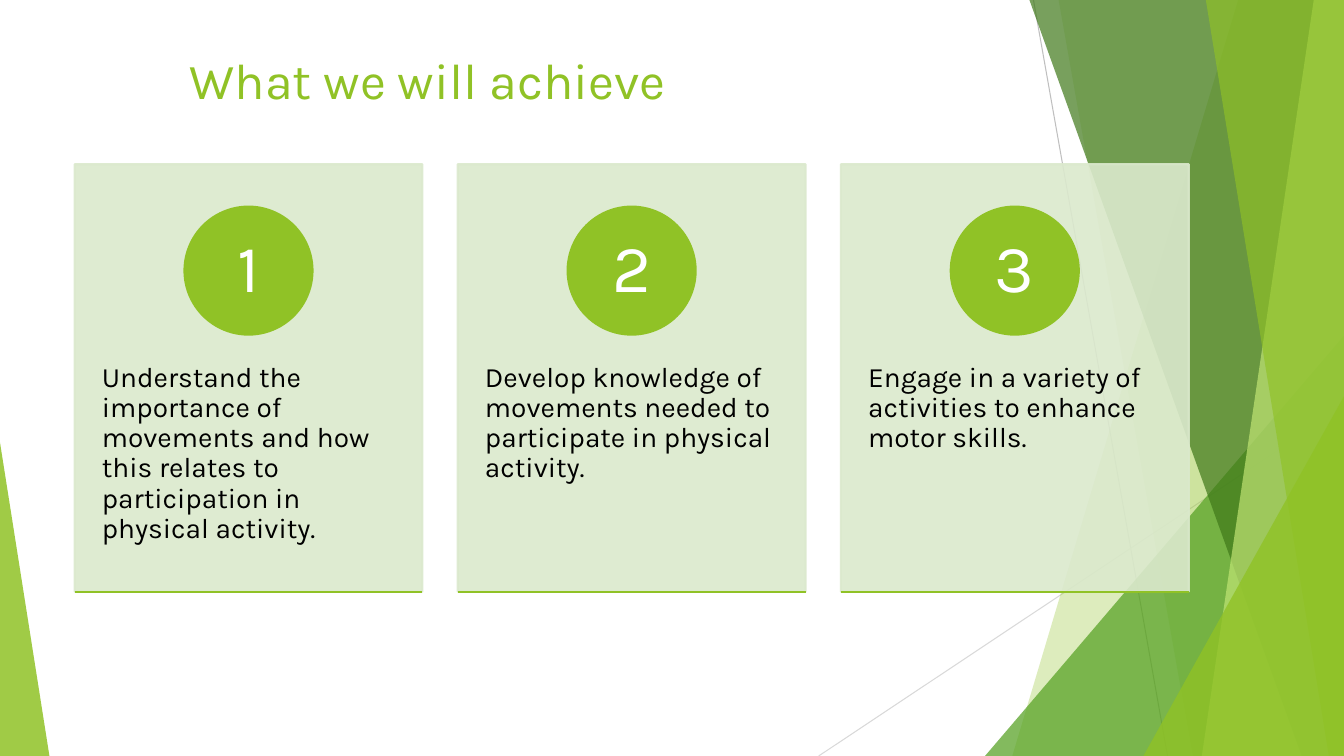
from dataclasses import dataclass

from lxml.etree import SubElement
from pptx import Presentation
from pptx.dml.color import RGBColor
from pptx.enum.shapes import MSO_CONNECTOR, MSO_SHAPE
from pptx.enum.text import MSO_ANCHOR, MSO_AUTO_SIZE, PP_ALIGN
from pptx.oxml.ns import qn
from pptx.util import Inches, Pt


@dataclass(frozen=True)
class Theme:
    font: str = "Karla"
    lime: str = "90C226"
    green: str = "54A021"
    forest: str = "3F7819"
    pale_lime: str = "C0E474"
    card: str = "DBE9CD"
    gray: str = "BFBFBF"
    light_gray: str = "D9D9D9"
    ink: str = "000000"
    white: str = "FFFFFF"
    title_size: int = 36
    number_size: int = 48
    body_size: int = 20
    hairline: float = 0.75
    outline: float = 1.5


class SlideBuilder:
    def __init__(self, slide, theme):
        self.slide = slide
        self.theme = theme

    def paint(self, shape, color, opacity=100, outline=None):
        shape.shadow.inherit = False
        shape.fill.solid()
        shape.fill.fore_color.rgb = RGBColor.from_string(color)
        if outline:
            shape.line.color.rgb = RGBColor.from_string(color)
            shape.line.width = Pt(outline)
        else:
            shape.line.fill.background()
        if opacity < 100:
            for tint in shape._element.spPr.iter(qn("a:srgbClr")):
                SubElement(tint, qn("a:alpha"), val=str(opacity * 1000))

    def preset(self, kind, box, color, opacity=100, outline=None):
        shape = self.slide.shapes.add_shape(kind, *map(Inches, box))
        self.paint(shape, color, opacity, outline)
        return shape

    def triangle(self, box, apex, color, opacity):
        shape = self.preset(MSO_SHAPE.ISOSCELES_TRIANGLE, box, color, opacity)
        shape.adjustments[0] = apex

    def polygon(self, points, color, opacity):
        start, *rest = [(Inches(x), Inches(y)) for x, y in points]
        outline = self.slide.shapes.build_freeform(*start)
        outline.add_line_segments(rest, close=True)
        self.paint(outline.convert_to_shape(), color, opacity)

    def line(self, start, end, color, width):
        connector = self.slide.shapes.add_connector(
            MSO_CONNECTOR.STRAIGHT, *map(Inches, (*start, *end)))
        connector.line.color.rgb = RGBColor.from_string(color)
        connector.line.width = Pt(width)
        SubElement(connector._element.spPr, qn("a:effectLst"))

    def set_text(self, frame, text, size, color, insets,
                 align=PP_ALIGN.LEFT, anchor=MSO_ANCHOR.TOP, spacing=0.9):
        frame.text = text
        frame.word_wrap = True
        frame.auto_size = MSO_AUTO_SIZE.NONE
        frame.vertical_anchor = anchor
        frame.margin_left = frame.margin_right = Inches(insets[0])
        frame.margin_top = frame.margin_bottom = Inches(insets[1])
        paragraph = frame.paragraphs[0]
        paragraph.alignment = align
        paragraph.line_spacing = spacing
        font = paragraph.runs[0].font
        font.name = self.theme.font
        font.size = Pt(size)
        font.color.rgb = RGBColor.from_string(color)

    def title(self, text, box):
        heading = self.slide.shapes.title
        heading.left, heading.top, heading.width, heading.height = map(Inches, box)
        self.set_text(heading.text_frame, text, self.theme.title_size,
                      self.theme.lime, (0.1, 0.05), spacing=1.0)

    def text(self, text, box):
        body = self.slide.shapes.add_textbox(*map(Inches, box))
        self.set_text(body.text_frame, text, self.theme.body_size,
                      self.theme.ink, (0.27, 0.36))

    def badge(self, number, box):
        circle = self.preset(MSO_SHAPE.OVAL, box, self.theme.lime,
                             outline=self.theme.outline)
        self.set_text(circle.text_frame, str(number), self.theme.number_size,
                      self.theme.white, (0.1, 0.01),
                      PP_ALIGN.CENTER, MSO_ANCHOR.MIDDLE)

    def goal_card(self, number, goal, left):
        top, width, height, diameter = 1.63, 3.45, 4.24, 1.27
        bottom = top + height
        self.preset(MSO_SHAPE.RECTANGLE, (left, top, width, height),
                    self.theme.card, 90, self.theme.outline)
        self.text(goal, (left, 3.24, width, 2.55))
        self.badge(number, (left + (width - diameter) / 2, 2.05, diameter, diameter))
        self.line((left, bottom), (left + width, bottom),
                  self.theme.lime, self.theme.outline)


def draw_backdrop(builder, width, height):
    theme = builder.theme

    def shard(top_left, bottom_left, color, opacity):
        builder.polygon([(top_left, 0), (width, 0), (width, height),
                         (bottom_left, height)], color, opacity)

    def corner(left, top, color, opacity):
        builder.triangle((left, top, width - left, height - top), 1, color, opacity)

    builder.line((10.25, 0), (11.58, height), theme.gray, theme.hairline)
    builder.line((width, 4.03), (8.12, height), theme.light_gray, theme.hairline)
    shard(12.28, 10.04, theme.lime, 30)
    shard(10.5, 11.83, theme.lime, 20)
    corner(9.77, 3.33, theme.green, 72)
    shard(10.21, 12.91, theme.forest, 70)
    shard(13.03, 11.92, theme.pale_lime, 70)
    shard(11.96, 13.18, theme.lime, 65)
    corner(11.34, 3.93, theme.lime, 80)
    builder.triangle((0, 4.39, 0.49, height - 4.39), 0, theme.lime, 85)


def main():
    width, height = 13.33, 7.5
    goals = [
        "Understand the importance of movements and how this relates to "
        "participation in physical activity.",
        "Develop knowledge of movements needed to participate in physical activity.",
        "Engage in a variety of activities to enhance motor skills.",
    ]
    presentation = Presentation()
    presentation.slide_width = Inches(width)
    presentation.slide_height = Inches(height)
    title_only = presentation.slide_layouts[5]
    builder = SlideBuilder(presentation.slides.add_slide(title_only), Theme())
    draw_backdrop(builder, width, height)
    builder.title("What we will achieve", (1.78, 0.44, 9.4, 1.44))
    for index, goal in enumerate(goals):
        builder.goal_card(index + 1, goal, 0.74 + 3.8 * index)
    presentation.save("out.pptx")


if __name__ == "__main__":
    main()
